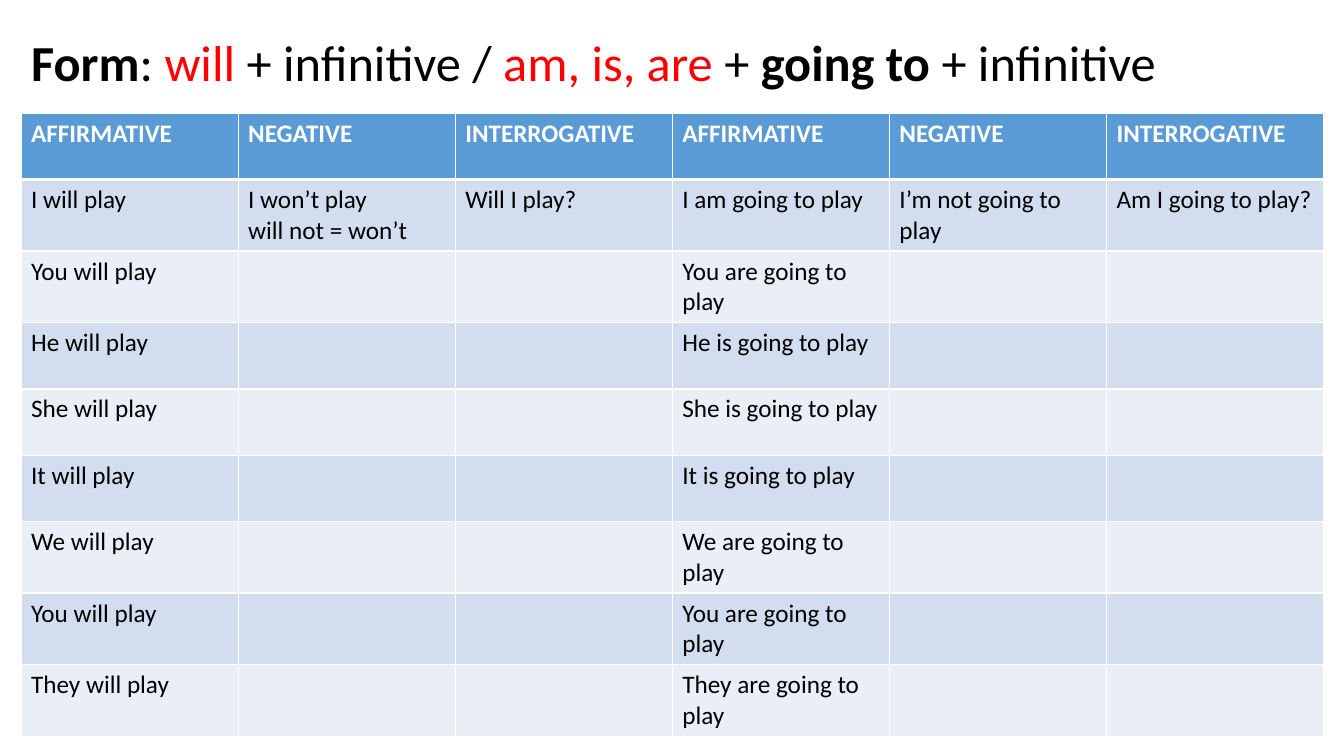
from lxml.etree import SubElement
from pptx import Presentation
from pptx.dml.color import RGBColor
from pptx.enum.text import MSO_ANCHOR, MSO_AUTO_SIZE, PP_ALIGN
from pptx.oxml.ns import qn
from pptx.util import Cm, Pt

BLACK, WHITE, RED = "000000", "FFFFFF", "FF0000"
HEADER_FILL, BANDS = "5B9BD5", ("D2DEEF", "EAEFF7")
LEFT, WIDTH = Cm(0.53), Cm(32.83)
ROW_HEIGHT = Cm(1.67)

TITLE = [
    ("Form", {"bold": True}),
    (": ", {}),
    ("will", {"color": RED}),
    (" + infinitive / ", {}),
    ("am, is, are ", {"color": RED}),
    ("+ ", {}),
    ("going to ", {"bold": True}),
    ("+ infinitive", {}),
]
HEADERS = ["AFFIRMATIVE", "NEGATIVE", "INTERROGATIVE"] * 2
FIRST_PERSON = ["I will play", "I won’t play\nwill not = won’t", "Will I play?",
                "I am going to play", "I’m not going to play", "Am I going to play?"]
SUBJECTS = [("You", "are"), ("He", "is"), ("She", "is"), ("It", "is"),
            ("We", "are"), ("You", "are"), ("They", "are")]


def rgb(color):
    return RGBColor.from_string(color)


def add_text(p, text, size=18, color=BLACK, bold=False, font="Calibri"):
    r = p.add_run()
    r.text = text
    r.font.name = font
    r.font.size = Pt(size)
    r.font.bold = bold
    r.font.color.rgb = rgb(color)


def set_borders(cell, bottom=1):
    tcPr = cell._tc.get_or_add_tcPr()
    for side, width in (("L", 1), ("R", 1), ("T", 1), ("B", bottom)):
        ln = SubElement(tcPr, qn(f"a:ln{side}"), w=str(Pt(width)))
        fill = SubElement(ln, qn("a:solidFill"))
        SubElement(fill, qn("a:srgbClr"), val=WHITE)


def format_title(title):
    title.left, title.top, title.width, title.height = LEFT, Cm(1.02), WIDTH, Cm(1.27)
    tf = title.text_frame
    tf.word_wrap = True
    tf.auto_size = MSO_AUTO_SIZE.NONE
    tf.vertical_anchor = MSO_ANCHOR.MIDDLE
    p = tf.paragraphs[0]
    p.alignment = PP_ALIGN.LEFT
    p.line_spacing = 0.9
    for text, style in TITLE:
        add_text(p, text, size=36, **style)


def fill_cell(cell, text, fill, bottom=1, **style):
    set_borders(cell, bottom)
    cell.fill.solid()
    cell.fill.fore_color.rgb = rgb(fill)
    tf = cell.text_frame
    for i, line in enumerate(text.splitlines()):
        p = tf.add_paragraph() if i else tf.paragraphs[0]
        add_text(p, line, **style)


def add_forms_table(s):
    rows = [HEADERS, FIRST_PERSON]
    for subject, verb in SUBJECTS:
        rows.append([f"{subject} will play", "", "",
                     f"{subject} {verb} going to play", "", ""])
    table = s.shapes.add_table(len(rows), len(HEADERS), LEFT, Cm(2.85),
                               WIDTH, ROW_HEIGHT * len(rows)).table
    for i, row in enumerate(rows):
        for j, text in enumerate(row):
            cell = table.cell(i, j)
            if i == 0:
                fill_cell(cell, text, HEADER_FILL, bottom=3, color=WHITE, bold=True)
            else:
                fill_cell(cell, text, BANDS[(i - 1) % 2])


def main():
    prs = Presentation()
    prs.slide_width, prs.slide_height = Cm(33.87), Cm(19.05)
    s = prs.slides.add_slide(prs.slide_layouts[5])
    format_title(s.shapes.title)
    add_forms_table(s)
    prs.save("out.pptx")


if __name__ == "__main__":
    main()
